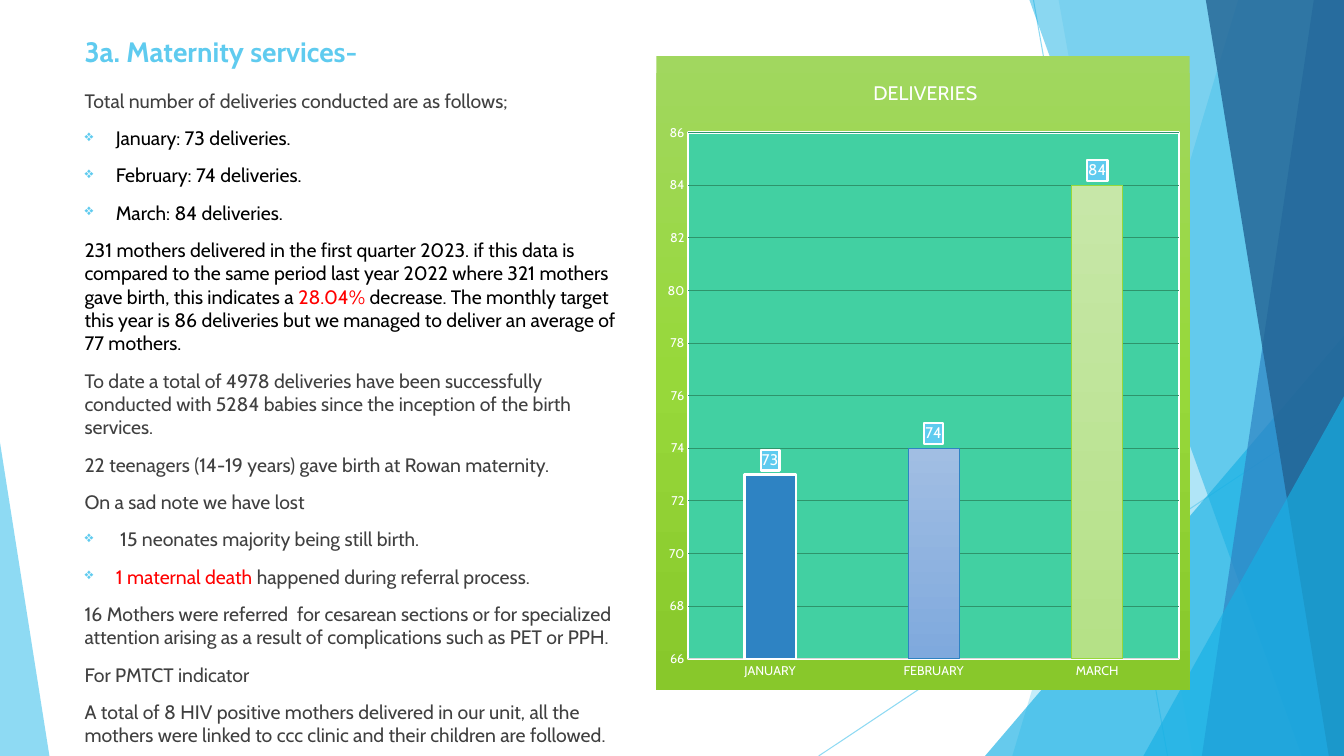
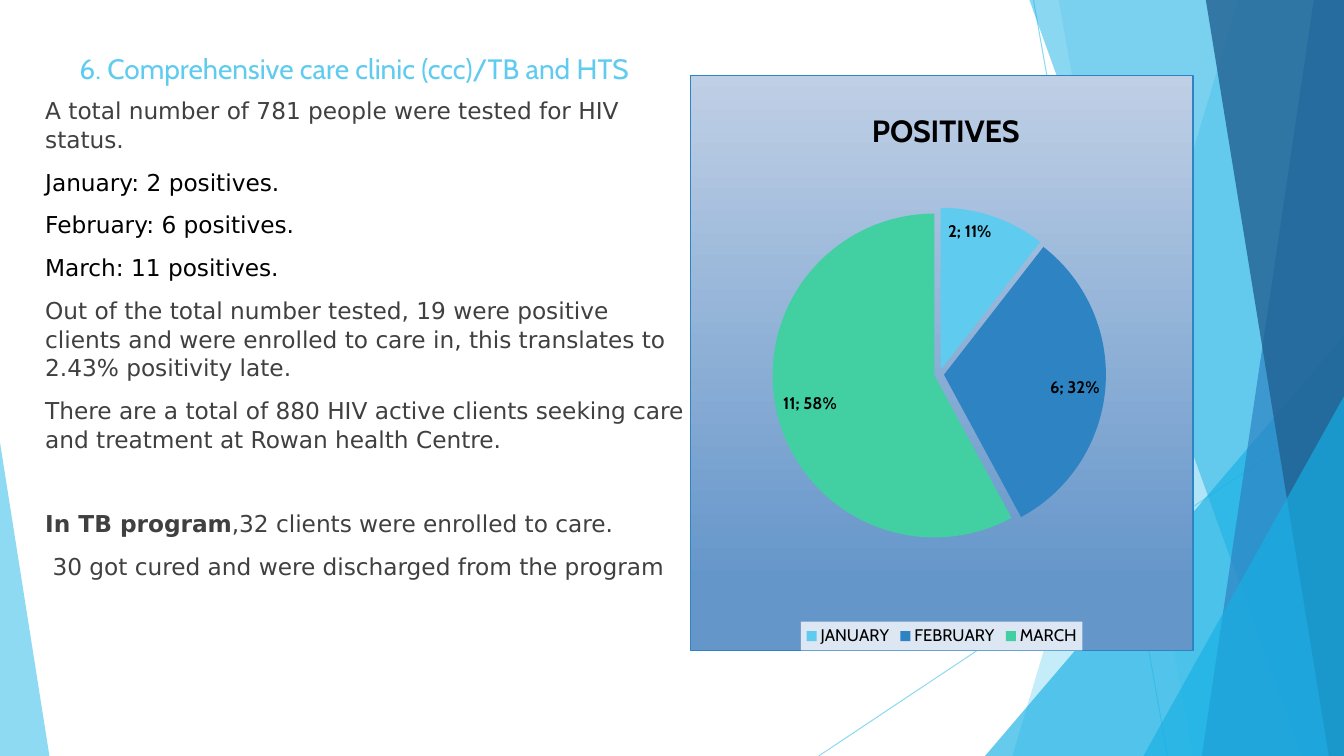
from lxml import etree
from pptx import Presentation
from pptx.chart.data import CategoryChartData
from pptx.dml.color import RGBColor
from pptx.enum.chart import XL_CHART_TYPE, XL_LABEL_POSITION, XL_LEGEND_POSITION, XL_TICK_MARK
from pptx.enum.shapes import MSO_CONNECTOR, MSO_SHAPE
from pptx.enum.text import MSO_ANCHOR
from pptx.oxml import parse_xml
from pptx.oxml.ns import nsdecls, qn
from pptx.util import Inches, Pt

COLUMN, PIE = XL_CHART_TYPE.COLUMN_CLUSTERED, XL_CHART_TYPE.PIE
OUTSIDE_END, INSIDE_END = XL_LABEL_POSITION.OUTSIDE_END, XL_LABEL_POSITION.INSIDE_END
LEGEND_BOTTOM, NO_TICK = XL_LEGEND_POSITION.BOTTOM, XL_TICK_MARK.NONE
STRAIGHT, TRIANGLE = MSO_CONNECTOR.STRAIGHT, MSO_SHAPE.ISOSCELES_TRIANGLE
TOP, BOTTOM = MSO_ANCHOR.TOP, MSO_ANCHOR.BOTTOM

WIDTH, HEIGHT = 13.33, 7.5
FONT, CLINIC_FONT = "Cabin", "DejaVu Sans"
SKY, CYAN, BLUE, NAVY, GREEN = "5FCBEF", "17B0E4", "2E83C3", "226292", "42D0A2"
BLACK, WHITE, GRAY, RED = "000000", "FFFFFF", "404040", "FF0000"
MONTHS = ["JANUARY", "FEBRUARY", "MARCH"]

RAYS = [((10.25, 0), (11.58, HEIGHT)), ((WIDTH, 4.03), (8.12, HEIGHT))]
FACETS = [
    ("band", 12.28, 10.04, SKY, 36),
    ("band", 10.5, 11.83, SKY, 20),
    ("triangle", (9.77, 3.33, 3.56, 4.17), 1, CYAN, 66),
    ("band", 10.21, 12.91, CYAN, 50),
    ("band", 13.03, 11.92, BLUE, 70),
    ("band", 11.96, 13.18, NAVY, 80),
    ("triangle", (11.34, 3.93, 1.99, 3.57), 1, CYAN, 66),
    ("triangle", (0, 4.39, 0.49, 3.11), 0, SKY, 70),
]

MATERNITY_TEXT = [
    (False, [("Total number of deliveries conducted are as follows;", GRAY)]),
    (True, [("January: 73 deliveries.", BLACK)]),
    (True, [("February: 74 deliveries.", BLACK)]),
    (True, [("March: 84 deliveries.", BLACK)]),
    (False, [("231 mothers delivered in the first quarter 2023. if this data is compared to the same "
              "period last year 2022 where 321 mothers gave birth, this indicates a ", BLACK),
             ("28.04% ", RED),
             ("decrease. The monthly target this year is 86 deliveries but we managed to deliver "
              "an average of 77 mothers.", BLACK)]),
    (False, [("To date a total of 4978 deliveries have been successfully conducted with 5284 babies "
              "since the inception of the birth services.", GRAY)]),
    (False, [("22 teenagers (14-19 years) gave birth at Rowan maternity.", GRAY)]),
    (False, [("On a sad note we have lost", GRAY)]),
    (True, [(" 15 neonates majority being still birth.", GRAY)]),
    (True, [("1 maternal death ", RED), ("happened during referral process.", GRAY)]),
    (False, [("16 Mothers were referred  for cesarean sections or for specialized attention arising "
              "as a result of complications such as PET or PPH.", GRAY)]),
    (False, [("For PMTCT indicator", GRAY)]),
    (False, [("A total of 8 HIV positive mothers delivered in our unit, all the mothers were linked "
              "to ccc clinic and their children are followed.", GRAY)]),
]
CLINIC_TEXT = [
    (10, [("A total number of 781 people were tested for HIV status.", GRAY)]),
    (10, [("January: 2 positives.", BLACK)]),
    (10, [("February: 6 positives.", BLACK)]),
    (10, [("March: 11 positives.", BLACK)]),
    (10, [("Out of the total number tested, 19 were positive clients and were enrolled to care in, "
           "this translates to 2.43% positivity late.", GRAY)]),
    (10, [("There are a total of 880 HIV active clients seeking care and treatment at Rowan health "
           "Centre.", GRAY)]),
    (39.5, [("In TB program", GRAY, True), (",32 clients were enrolled to care.", GRAY)]),
    (10, [(" 30 got cured and were discharged from the program", GRAY)]),
]


def rgb(value):
    return RGBColor.from_string(value)


def set_font(font, size, color, bold=False, name=FONT):
    font.size, font.bold, font.name = Pt(size), bold, name
    font.color.rgb = rgb(color)


def write(paragraph, text, **style):
    run = paragraph.add_run()
    run.text = text
    set_font(run.font, **style)


def set_alpha(element, percent):
    for color in element.iter(qn("a:srgbClr")):
        etree.SubElement(color, qn("a:alpha")).set("val", str(percent * 1000))


def add_bullet(paragraph):
    properties = paragraph._p.get_or_add_pPr()
    properties.set("marL", str(Inches(0.31)))
    properties.set("indent", str(-Inches(0.31)))
    for xml in (f'<a:buClr {nsdecls("a")}><a:srgbClr val="{SKY}"/></a:buClr>',
                f'<a:buSzPct {nsdecls("a")} val="80000"/>',
                f'<a:buChar {nsdecls("a")} char="❖"/>'):
        properties.append(parse_xml(xml))


def area_format(stops, line=None, line_width=0):
    def solid(color):
        return f'<a:solidFill><a:srgbClr val="{color}"/></a:solidFill>'

    if isinstance(stops, str):
        fill = solid(stops)
    else:
        marks = "".join(f'<a:gs pos="{place * 1000}"><a:srgbClr val="{color}"/></a:gs>'
                        for place, color in stops)
        fill = f'<a:gradFill><a:gsLst>{marks}</a:gsLst><a:lin ang="5400000" scaled="0"/></a:gradFill>'
    outline = solid(line) if line else "<a:noFill/>"
    return parse_xml(f'<c:spPr {nsdecls("c", "a")}>{fill}'
                     f'<a:ln w="{Pt(line_width)}">{outline}</a:ln></c:spPr>')


def manual_layout(parent, index, places, inner=False):
    for layout in parent.findall(qn("c:layout")):
        parent.remove(layout)
    target = '<c:layoutTarget val="inner"/>' if inner else ""
    modes = "".join(f'<c:{key}Mode val="edge"/>' for key in "xy")
    values = "".join(f'<c:{key} val="{value}"/>' for key, value in zip("xywh", places))
    parent.insert(index, parse_xml(
        f'<c:layout {nsdecls("c")}><c:manualLayout>{target}{modes}{values}'
        '</c:manualLayout></c:layout>'))


class Deck:
    """Holds the presentation, its shared style and the current slide."""

    def __init__(self):
        self.presentation = Presentation()
        self.presentation.slide_width = Inches(WIDTH)
        self.presentation.slide_height = Inches(HEIGHT)
        self.slide = None

    def add_slide(self):
        self.slide = self.presentation.slides.add_slide(self.presentation.slide_layouts[6])
        for start, end in RAYS:
            self.ray(start, end)
        for kind, *details in FACETS:
            getattr(self, kind)(*details)

    def ray(self, start, end):
        line = self.slide.shapes.add_connector(STRAIGHT, *map(Inches, start + end))
        line.line.color.rgb = rgb(SKY)
        line.line.width = Pt(0.75)
        properties = line._element.spPr
        set_alpha(properties, 70)
        etree.SubElement(properties, qn("a:effectLst"))

    def paint(self, shape, color, alpha):
        shape.shadow.inherit = False
        shape.fill.solid()
        shape.fill.fore_color.rgb = rgb(color)
        shape.line.fill.background()
        set_alpha(shape._element.spPr, alpha)

    def band(self, top_left, bottom_left, color, alpha):
        builder = self.slide.shapes.build_freeform(Inches(top_left), 0)
        corners = [(WIDTH, 0), (WIDTH, HEIGHT), (bottom_left, HEIGHT)]
        builder.add_line_segments([(Inches(x), Inches(y)) for x, y in corners])
        self.paint(builder.convert_to_shape(), color, alpha)

    def triangle(self, box, apex, color, alpha):
        shape = self.slide.shapes.add_shape(TRIANGLE, *map(Inches, box))
        shape.adjustments[0] = apex
        self.paint(shape, color, alpha)

    def text_frame(self, box, anchor=TOP):
        frame = self.slide.shapes.add_textbox(*map(Inches, box)).text_frame
        frame.word_wrap = True
        frame.vertical_anchor = anchor
        return frame

    def title(self, text, box, bold=False):
        write(self.text_frame(box, BOTTOM).paragraphs[0], text, size=20, color=SKY, bold=bold)

    def body(self, entries, box, size, name=FONT, line_spacing=1.0):
        frame = self.text_frame(box)
        for index, (mark, runs) in enumerate(entries):
            paragraph = frame.add_paragraph() if index else frame.paragraphs[0]
            if mark is True:
                add_bullet(paragraph)
            paragraph.line_spacing = line_spacing
            if index:
                paragraph.space_before = Pt(10 if isinstance(mark, bool) else mark)
            for text, color, *bold in runs:
                write(paragraph, text, size=size, color=color, bold=bool(bold), name=name)

    def chart(self, kind, box, name, values, area, plot_box, title_place, title_style):
        data = CategoryChartData()
        data.categories = MONTHS
        data.add_series(name, values)
        chart = self.slide.shapes.add_chart(kind, *map(Inches, box), data).chart
        set_font(chart.font, 10, title_style["color"])
        chart.has_legend = False
        chart.has_title = True
        write(chart.chart_title.text_frame.paragraphs[0], name, **title_style)
        chart.chart_title.include_in_layout = False
        manual_layout(chart.element.find(".//" + qn("c:title")), 1, title_place)
        manual_layout(chart.element.find(".//" + qn("c:plotArea")), 0, plot_box, inner=True)
        chart.element.find(qn("c:chart")).addnext(area)
        return chart

    def labels(self, series, position, **style):
        labels = series.data_labels
        labels.show_value = True
        labels.position = position
        set_font(labels.font, **style)
        return labels

    def deliveries_chart(self):
        area = area_format([(0, "A1D75F"), (50, "97D83A"), (100, "88C82B")])
        chart = self.chart(COLUMN, (6.51, 0.56, 5.29, 6.29), "DELIVERIES", (73, 74, 84), area,
                           (0.06, 0.12, 0.92, 0.83), (0.4, 0.03), {"size": 14, "color": WHITE})
        chart.element.find(".//" + qn("c:plotArea")).append(area_format(GREEN, WHITE, 1.5))
        plot = chart.plots[0]
        plot.gap_width, plot.overlap, plot.vary_by_categories = 219, -27, False
        for axis in (chart.category_axis, chart.value_axis):
            axis.major_tick_mark = axis.minor_tick_mark = NO_TICK
            set_font(axis.tick_labels.font, 9, WHITE)
        chart.category_axis.format.line.color.rgb = rgb("D9D9D9")
        chart.category_axis.format.line.width = Pt(0.75)
        axis = chart.value_axis
        axis.minimum_scale, axis.maximum_scale, axis.major_unit = 66, 86, 2
        axis.format.line.fill.background()
        axis.major_gridlines.format.line.color.rgb = rgb("2E946B")
        axis.major_gridlines.format.line.width = Pt(0.5)
        series = plot.series[0]
        bars = [((BLUE,), WHITE, 1.5), (("A1BEE3", "7FA9DD"), BLUE, 0.5),
                (("C7E7A8", "B5E187"), "97D83A", 0.5)]
        for index, (colors, line, width) in enumerate(bars):
            bar = series.points[index].format
            if len(colors) == 1:
                bar.fill.solid()
                bar.fill.fore_color.rgb = rgb(colors[0])
            else:
                bar.fill.gradient()
                bar.fill.gradient_angle = 270
                for stop, color in zip(bar.fill.gradient_stops, colors):
                    stop.color.rgb = rgb(color)
            bar.line.color.rgb = rgb(line)
            bar.line.width = Pt(width)
        self.labels(series, OUTSIDE_END, size=11, color=WHITE)
        label_text = chart.element.find(f".//{qn('c:dLbls')}/{qn('c:txPr')}")
        label_text.addprevious(area_format(SKY, WHITE, 1.5))

    def positives_chart(self):
        area = area_format([(0, "BFCFE5"), (88, "6596CA"), (100, "6596CA")], BLUE, 1)
        chart = self.chart(PIE, (6.84, 0.74, 5, 5.72), "POSITIVES", (2, 6, 11), area,
                           (0.09, 0.23, 0.81, 0.58), (0.35, 0.05),
                           {"size": 22, "color": BLACK, "bold": True})
        chart.plots[0].vary_by_categories = True
        series_name = chart.element.find(f".//{qn('c:ser')}/{qn('c:tx')}")
        series_name.addnext(parse_xml(f'<c:explosion {nsdecls("c")} val="3"/>'))
        series = chart.plots[0].series[0]
        for index, color in enumerate((SKY, BLUE, GREEN)):
            fill = series.points[index].format.fill
            fill.solid()
            fill.fore_color.rgb = rgb(color)
        labels = self.labels(series, INSIDE_END, size=12, color=BLACK, bold=True)
        labels.show_percentage = True
        separator = parse_xml(f'<c:separator {nsdecls("c")}>; </c:separator>')
        chart.element.find(f".//{qn('c:dLbls')}/{qn('c:showPercent')}").getparent().find(
            qn("c:showBubbleSize")).addnext(separator)
        chart.has_legend = True
        chart.legend.position = LEGEND_BOTTOM
        chart.legend.include_in_layout = False
        set_font(chart.legend.font, 12, BLACK)
        legend = chart.element.find(".//" + qn("c:legend"))
        manual_layout(legend, 1, (0.22, 0.95, 0.56, 0.05))
        background = area_format(WHITE)
        set_alpha(background, 78)
        legend.find(qn("c:txPr")).addprevious(background)


def main():
    deck = Deck()
    deck.add_slide()
    deck.title("3a. Maternity services-", (0.74, 0.27, 9.55, 0.45), bold=True)
    deck.body(MATERNITY_TEXT, (0.74, 0.83, 5.59, 6.36), 13.9)
    deck.deliveries_chart()
    deck.add_slide()
    deck.title("6. Comprehensive care clinic (ccc)/TB and HTS", (0.69, 0.06, 5.84, 0.83))
    deck.body(CLINIC_TEXT, (0.35, 0.9, 6.58, 5.4), 16.6, CLINIC_FONT, 1.03)
    deck.positives_chart()
    deck.presentation.save("out.pptx")


if __name__ == "__main__":
    main()
